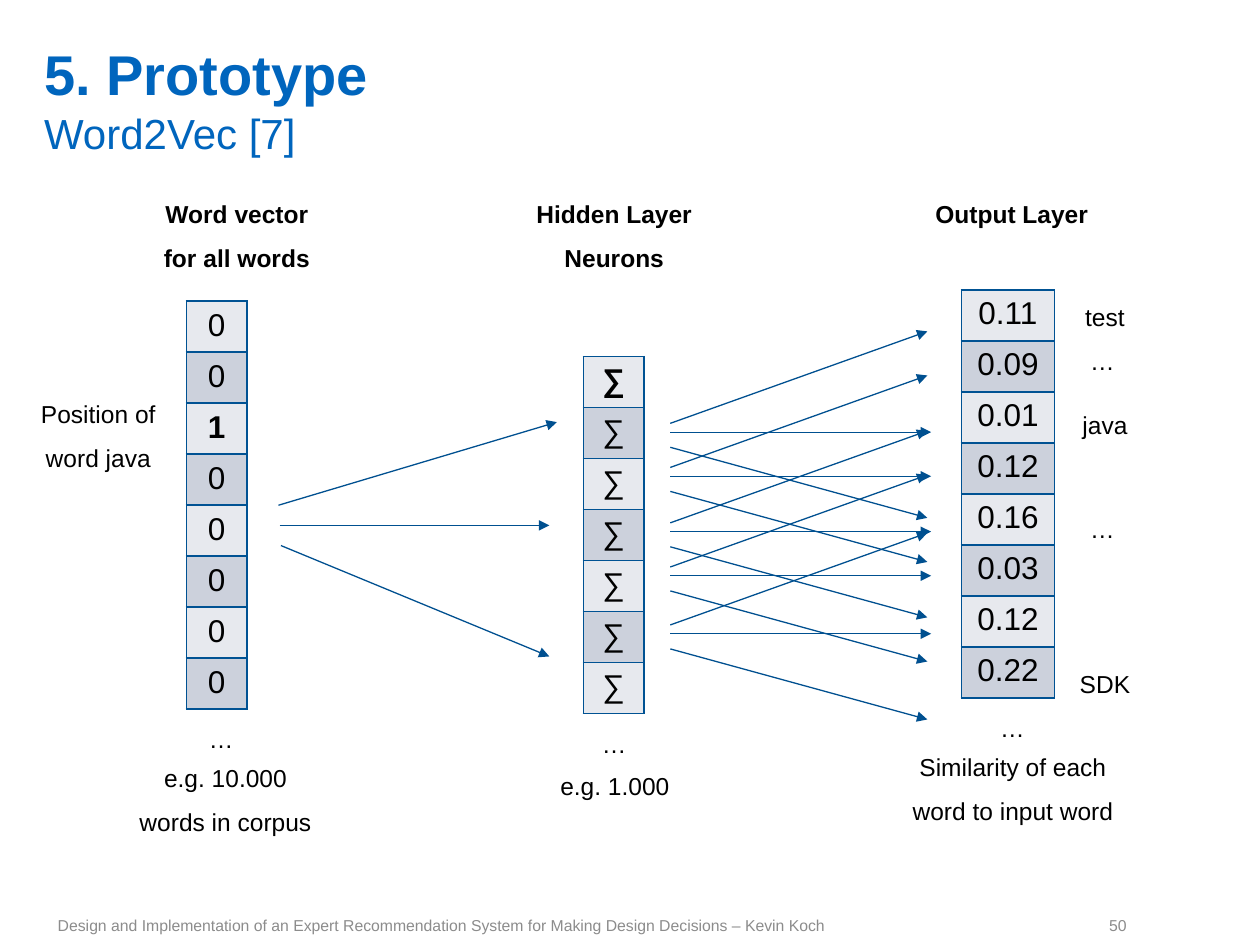
import pptx
import pptx.dml.color
import pptx.enum.shapes
import pptx.enum.text
import pptx.oxml
import pptx.oxml.ns
import pptx.util
from pptx.util import Inches

ALIGN = pptx.enum.text.PP_ALIGN
ANCHOR = pptx.enum.text.MSO_ANCHOR


def color(hex_value):
    return pptx.dml.color.RGBColor.from_string(hex_value)


class NetworkSlide:
    face = "Arial"
    title_color = "0065BD"
    text_color = "000000"
    footer_color = "8C8C8C"
    border_color = "005293"
    arrow_color = "005090"
    band_colors = ("E7E9EE", "CCD1DC")

    def __init__(self, presentation):
        self.slide = presentation.slides.add_slide(presentation.slide_layouts[5])

    def style(self, font, size, hex_value, bold=False):
        font.name = self.face
        font.size = pptx.util.Pt(size)
        font.bold = bold
        font.color.rgb = color(hex_value)

    def clear_margins(self, frame):
        frame.margin_left = frame.margin_right = 0
        frame.margin_top = frame.margin_bottom = 0

    def title(self, heading, subheading, left, top, width, height):
        title = self.slide.shapes.title
        title.left, title.top = Inches(left), Inches(top)
        title.width, title.height = Inches(width), Inches(height)
        frame = title.text_frame
        self.clear_margins(frame)
        frame.auto_size = pptx.enum.text.MSO_AUTO_SIZE.NONE
        frame.vertical_anchor = ANCHOR.BOTTOM
        paragraph = frame.paragraphs[0]
        paragraph.alignment = ALIGN.LEFT
        heading_run = paragraph.add_run()
        heading_run.text = heading
        self.style(heading_run.font, 32, self.title_color, True)
        paragraph.add_line_break()
        subheading_run = paragraph.add_run()
        subheading_run.text = subheading
        self.style(subheading_run.font, 24, self.title_color)

    def text_box(self, text, left, top, width, height):
        box = self.slide.shapes.add_textbox(
            Inches(left), Inches(top), Inches(width), Inches(height))
        frame = box.text_frame
        frame.word_wrap = True
        frame.text = text
        return frame

    def label(self, text, left, top, width, height=0.31, bold=False):
        frame = self.text_box(text, left, top, width, height)
        self.clear_margins(frame)
        paragraph = frame.paragraphs[0]
        paragraph.alignment = ALIGN.CENTER
        paragraph.line_spacing = 1.5
        self.style(paragraph.font, 14, self.text_color, bold)

    def footer(self, text, left, width, alignment):
        frame = self.text_box(text, left, 7.18, width, 0.32)
        frame.vertical_anchor = ANCHOR.MIDDLE
        paragraph = frame.paragraphs[0]
        paragraph.alignment = alignment
        self.style(paragraph.font, 9, self.footer_color)

    def border(self, cell):
        properties = cell._tc.get_or_add_tcPr()
        for position, side in enumerate(("lnL", "lnR", "lnT", "lnB")):
            properties.insert(position, pptx.oxml.parse_xml(
                f'<a:{side} {pptx.oxml.ns.nsdecls("a")} w="12700"><a:solidFill>'
                f'<a:srgbClr val="{self.border_color}"/></a:solidFill></a:{side}>'))

    def vector(self, values, left, top, width, bold_row=None):
        row_height = Inches(0.405)
        table = self.slide.shapes.add_table(
            len(values), 1, Inches(left), Inches(top), Inches(width),
            row_height * len(values)).table
        table.first_row = table.horz_banding = False
        for index, value in enumerate(values):
            table.rows[index].height = row_height
            cell = table.cell(index, 0)
            cell.text = value
            cell.fill.solid()
            cell.fill.fore_color.rgb = color(self.band_colors[index % 2])
            self.border(cell)
            paragraph = cell.text_frame.paragraphs[0]
            paragraph.alignment = ALIGN.CENTER
            self.style(paragraph.font, 18, self.text_color, index == bold_row)

    def arrow(self, x1, y1, x2, y2):
        arrow = self.slide.shapes.add_connector(
            pptx.enum.shapes.MSO_CONNECTOR.STRAIGHT,
            Inches(x1), Inches(y1), Inches(x2), Inches(y2))
        arrow.line.color.rgb = color(self.arrow_color)
        arrow.line.width = pptx.util.Pt(0.75)
        namespace = pptx.oxml.ns.nsdecls("a")
        arrow.line._get_or_add_ln().append(
            pptx.oxml.parse_xml(f'<a:tailEnd {namespace} type="triangle"/>'))
        arrow._element.spPr.append(pptx.oxml.parse_xml(f"<a:effectLst {namespace}/>"))


def main():
    presentation = pptx.Presentation()
    presentation.slide_width = Inches(10)
    presentation.slide_height = Inches(7.5)
    network = NetworkSlide(presentation)

    network.title("5. Prototype", "Word2Vec [7]", 0.35, 0.31, 8.57, 0.94)

    network.vector(list("00100000"), 1.48, 2.39, 0.48, bold_row=2)
    network.vector(["∑"] * 7, 4.63, 2.83, 0.48, bold_row=0)
    similarities = ["0.11", "0.09", "0.01", "0.12", "0.16", "0.03", "0.12", "0.22"]
    network.vector(similarities, 7.63, 2.3, 0.74)

    network.label("Word vector for all words", 1.27, 1.46, 1.22, 0.66, bold=True)
    network.label("Hidden Layer Neurons", 4.19, 1.46, 1.37, 0.66, bold=True)
    network.label("Output Layer", 7.42, 1.46, 1.22, bold=True)

    network.label("Position of word java", 0.17, 3.05, 1.22, 0.66)
    network.label("e.g. 10.000\vwords in corpus", 1.03, 5.94, 1.52, 0.66)
    network.label("e.g. 1.000", 4.12, 6, 1.52)
    network.label("Similarity of each word to input word", 7.21, 5.85, 1.66, 0.66)
    for left, top in ((1.57, 5.63), (4.69, 5.67), (7.85, 5.54)):
        network.label("…", left, top, 0.37)
    output_words = (("test", 2.28), ("…", 2.63), ("java", 3.14), ("…", 3.96), ("SDK", 5.19))
    for word, top in output_words:
        network.label(word, 8.38 if word == "…" else 8.4, top, 0.74)

    network.arrow(2.21, 4.01, 4.42, 3.35)
    network.arrow(2.22, 4.17, 4.36, 4.17)
    network.arrow(2.23, 4.33, 4.36, 5.21)
    for neuron_y in (3.43, 3.78, 4.22, 4.57, 5.03):
        network.arrow(5.32, neuron_y - 0.07, 7.36, neuron_y - 0.8)
        network.arrow(5.32, neuron_y, 7.39, neuron_y)
        network.arrow(5.32, neuron_y + 0.12, 7.36, neuron_y + 0.68)

    network.footer(
        "Design and Implementation of an Expert Recommendation System "
        "for Making Design Decisions – Kevin Koch", 0.36, 8.01, ALIGN.LEFT)
    network.footer("50", 8.37, 0.67, ALIGN.RIGHT)

    presentation.save("out.pptx")


if __name__ == "__main__":
    main()
